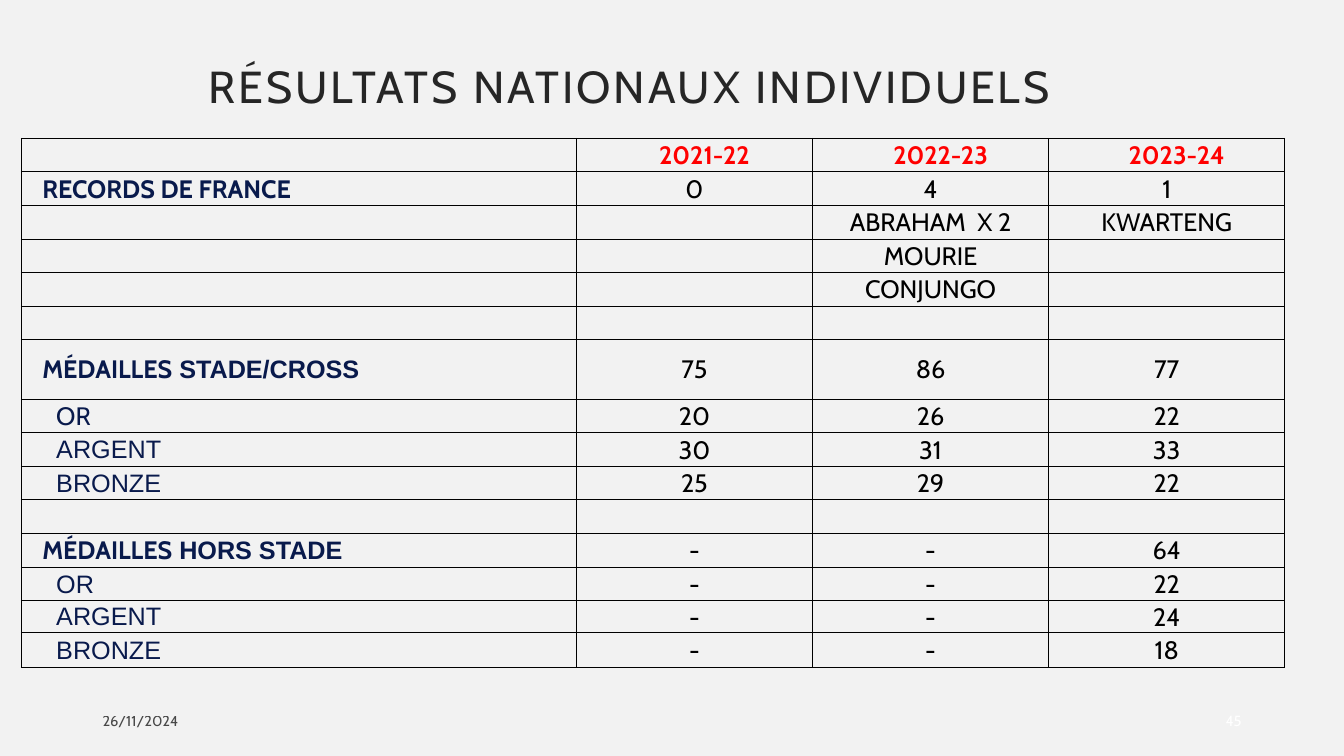
from pptx import Presentation
from pptx.dml.color import RGBColor
from pptx.enum import text
from pptx.oxml import parse_xml
from pptx.oxml.ns import nsdecls, qn
from pptx.util import Pt

TITLE = "RÉSULTATS NATIONAUX INDIVIDUELS"
DATE, PAGE = "26/11/2024", "45"
SEASONS = ["2021-22", "2022-23", "2023-24"]
# Label parts as (text, font key), label level, values, row height
ROWS = [
    ([], "head", SEASONS, 24),
    ([("RECORDS DE FRANCE", "main")], "group", ["0", "4", "1"], 24),
    ([], "item", ["", "ABRAHAM  X 2", "KWARTENG"], 24),
    ([], "item", ["", "MOURIE", ""], 24),
    ([], "item", ["", "CONJUNGO", ""], 24),
    ([], "item", ["", "", ""], 24),
    ([("MÉDAILLES", "main"), (" STADE/CROSS", "alt")], "group", ["75", "86", "77"], 42.5),
    ([("OR", "main")], "item", ["20", "26", "22"], 24),
    ([("ARGENT", "alt")], "item", ["30", "31", "33"], 24),
    ([("BRONZE", "alt")], "item", ["25", "29", "22"], 24),
    ([], "item", ["", "", ""], 24),
    ([("MÉDAILLES", "main"), (" HORS STADE", "alt")], "group", ["-", "-", "64"], 24),
    ([("OR", "alt")], "item", ["-", "-", "22"], 24),
    ([("ARGENT", "alt")], "item", ["-", "-", "24"], 22.5),
    ([("BRONZE", "alt")], "item", ["-", "-", "18"], 25.2),
]
COLS = [396.5, 168.7, 168.7, 168.7]

THEME = {
    "main": "Cabin", "alt": "Arial",
    "bg": "F2F2F2", "title": "262626", "label": "091A4C", "season": "FF0000",
    "black": "000000", "white": "FFFFFF",
    "title_size": 32, "cell_size": 18, "footer_size": 10.5, "border": 0.75,
}
INDENT = {"head": 15, "group": 15, "item": 25}
LEFT, CENTER, RIGHT = text.PP_ALIGN.LEFT, text.PP_ALIGN.CENTER, text.PP_ALIGN.RIGHT


def rgb(key):
    return RGBColor.from_string(THEME[key])


def add_run(p, content, size, color, font="main", bold=False):
    r = p.add_run()
    r.text = content
    for name, value in {"name": THEME[font], "size": Pt(THEME[size]), "bold": bold}.items():
        setattr(r.font, name, value)
    r.font.color.rgb = rgb(color)
    return r


def format_frame(tf, **values):
    for name, value in values.items():
        setattr(tf, name, value)


def add_footer(s, content, left, width, align, color):
    tf = s.shapes.add_textbox(Pt(left), Pt(500.5), Pt(width), Pt(28.8)).text_frame
    format_frame(tf, word_wrap=True, vertical_anchor=text.MSO_ANCHOR.MIDDLE)
    p = tf.paragraphs[0]
    p.alignment = align
    return add_run(p, content, "footer_size", color)


def set_borders(cell):
    pr = cell._tc.get_or_add_tcPr()
    for i, side in enumerate(("lnL", "lnR", "lnT", "lnB")):
        pr.insert(i, parse_xml(
            f'<a:{side} {nsdecls("a")} w="{Pt(THEME["border"])}"><a:solidFill>'
            f'<a:srgbClr val="{THEME["black"]}"/></a:solidFill></a:{side}>'))


def fill_cell(cell, parts, indent, align, color, bold):
    cell.fill.background()
    set_borders(cell)
    format_frame(cell, margin_left=Pt(indent), margin_right=Pt(0.7), margin_top=Pt(0.7),
                 margin_bottom=Pt(0), vertical_anchor=text.MSO_ANCHOR.MIDDLE)
    p = cell.text_frame.paragraphs[0]
    p.alignment = align
    for content, font in parts:
        add_run(p, content, "cell_size", color, font, bold)


def add_title(s):
    sp = s.shapes.title
    format_frame(sp, left=Pt(61), top=Pt(28.8), width=Pt(777.6), height=Pt(69.8))
    tf = sp.text_frame
    format_frame(tf, word_wrap=True, auto_size=text.MSO_AUTO_SIZE.NONE,
                 vertical_anchor=text.MSO_ANCHOR.MIDDLE)
    p = tf.paragraphs[0]
    p.alignment, p.line_spacing = CENTER, 0.9
    r = add_run(p, TITLE, "title_size", "title")
    r.font._element.set("spc", "200")


def add_results(s):
    heights = [row[-1] for row in ROWS]
    table = s.shapes.add_table(len(ROWS), len(COLS), Pt(15.2), Pt(98.8),
                               Pt(sum(COLS)), Pt(sum(heights))).table
    table.first_row = table.horz_banding = False
    for col, width in zip(table.columns, COLS):
        col.width = Pt(width)
    for i, (label, level, values, height) in enumerate(ROWS):
        table.rows[i].height = Pt(height)
        fill_cell(table.cell(i, 0), label, INDENT[level], LEFT, "label", level == "group")
        head = level == "head"
        for j, value in enumerate(values, 1):
            parts = [(value, "main")] if value else []
            fill_cell(table.cell(i, j), parts, INDENT["head"] if head else 0.7, CENTER,
                      "season" if head else "black", head)


def main():
    prs = Presentation()
    prs.slide_width, prs.slide_height = Pt(960), Pt(540)
    s = prs.slides.add_slide(prs.slide_layouts[5])
    s.background.fill.solid()
    s.background.fill.fore_color.rgb = rgb("bg")
    add_title(s)
    add_results(s)
    date = add_footer(s, DATE, 66.2, 216, LEFT, "black")
    clr = date.font._element.find(".//" + qn("a:srgbClr"))
    clr.append(parse_xml(f'<a:alpha {nsdecls("a")} val="70000"/>'))
    add_footer(s, PAGE, 822, 72, RIGHT, "white")
    prs.save("out.pptx")


if __name__ == "__main__":
    main()
